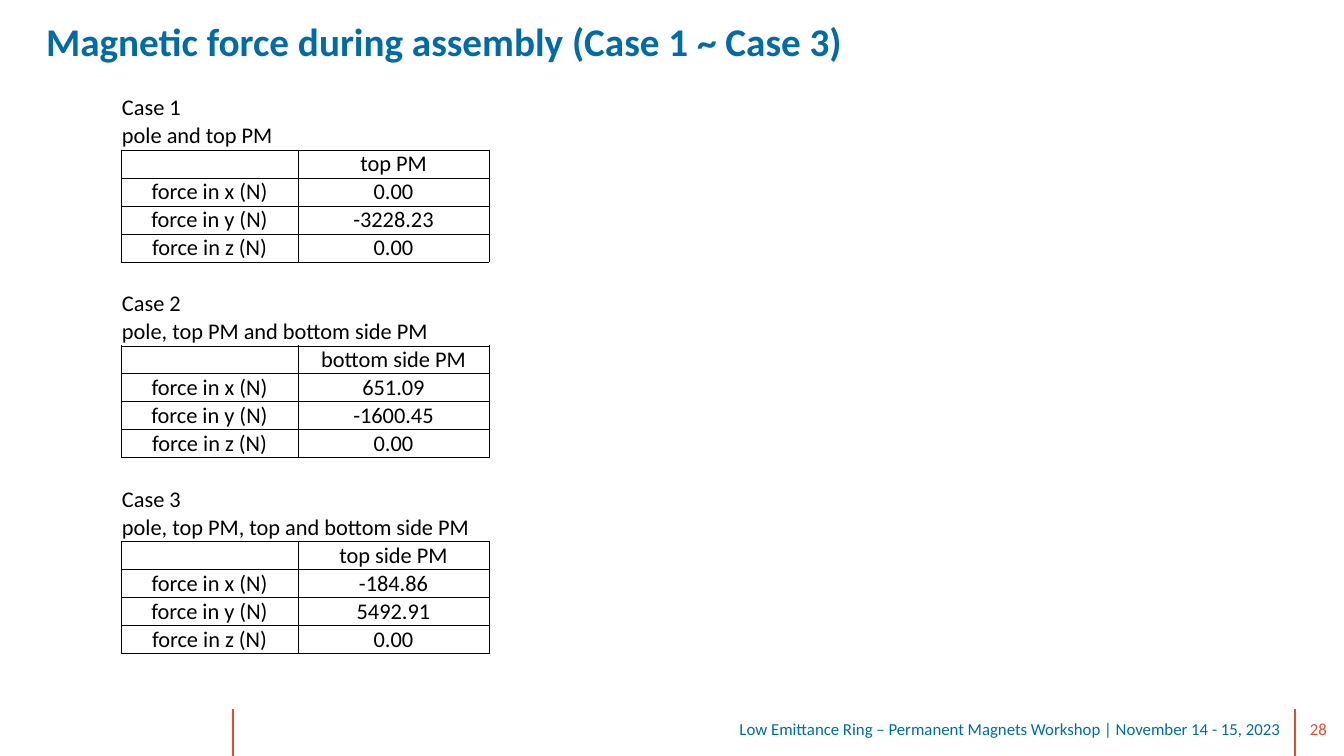
from lxml import etree
from pptx import Presentation
from pptx import util as u
from pptx.dml.color import RGBColor
from pptx.enum import shapes, text
from pptx.oxml.ns import qn

PX = 914400 / 100.8
COLORS = {"blue": "006BA6", "red": "E04E38", "black": "000000"}
FONT = "Calibri"
ROW_HEIGHT = 28
COLUMN_WIDTHS = (177, 191)
AXES = "xyz"
CASES = [
    ("Case 1", "pole and top PM", "top PM", ("0.00", "-3228.23", "0.00")),
    ("Case 2", "pole, top PM and bottom side PM", "bottom side PM",
     ("651.09", "-1600.45", "0.00")),
    ("Case 3", "pole, top PM, top and bottom side PM", "top side PM",
     ("-184.86", "5492.91", "0.00")),
]


def px(length):
    return u.Emu(round(length * PX))


def color(name):
    return RGBColor.from_string(COLORS[name])


def write(frame, words, size, ink="black", bold=False, align=text.PP_ALIGN.LEFT):
    paragraph = frame.paragraphs[0]
    paragraph.alignment = align
    if not words:  # keeps an empty line as low as a filled one
        etree.SubElement(paragraph._p, qn("a:endParaRPr"), sz=str(size * 100))
        return
    run = paragraph.add_run()
    run.text = words
    run.font.name = FONT
    run.font.size = u.Pt(size)
    run.font.bold = bold
    run.font.color.rgb = color(ink)


def set_borders(cell, sides):
    """Draw the named sides (of L, R, T, B) and hide the others."""
    properties = cell._tc.get_or_add_tcPr()
    for side in "LRTB":
        line = etree.SubElement(properties, qn("a:ln" + side), w=str(u.Pt(0.5)))
        if side in sides:
            fill = etree.SubElement(line, qn("a:solidFill"))
            etree.SubElement(fill, qn("a:srgbClr"), val=COLORS["black"])
        else:
            etree.SubElement(line, qn("a:noFill"))


def fill_cell(cell, words, sides, align):
    cell.margin_left = cell.margin_right = px(1)
    cell.margin_top = cell.margin_bottom = 0
    cell.vertical_anchor = text.MSO_ANCHOR.BOTTOM
    write(cell.text_frame, words, 16, align=align)
    set_borders(cell, sides)
    cell.fill.background()


def case_rows():
    """List each table row as its two texts, its borders and its alignment."""
    left, center = text.PP_ALIGN.LEFT, text.PP_ALIGN.CENTER
    rows = []
    for name, parts, magnet, forces in CASES:
        if rows:
            rows.append(("", "", "T", left))
        rows.append((name, "", "", left))
        rows.append((parts, "", "B", left))
        rows.append(("", magnet, "LRTB", center))
        rows += [(f"force in {axis} (N)", force, "LRTB", center)
                 for axis, force in zip(AXES, forces)]
    return rows


def add_force_table(slide, left, top):
    rows = case_rows()
    table = slide.shapes.add_table(
        len(rows), len(COLUMN_WIDTHS), px(left), px(top),
        px(sum(COLUMN_WIDTHS)), px(ROW_HEIGHT * len(rows))).table
    table.first_row = table.horz_banding = False
    for column, width in zip(table.columns, COLUMN_WIDTHS):
        column.width = px(width)
    for index, (label, value, sides, align) in enumerate(rows):
        table.rows[index].height = px(ROW_HEIGHT)
        fill_cell(table.cell(index, 0), label, sides, align)
        fill_cell(table.cell(index, 1), value, sides, align)
        if len(label) > 20:
            table.cell(index, 0).merge(table.cell(index, 1))


def add_title(slide, left, top, width, height):
    title = slide.shapes.title
    title.left, title.top = px(left), px(top)
    title.width, title.height = px(width), px(height)
    title.text_frame.vertical_anchor = text.MSO_ANCHOR.TOP
    title.text_frame.auto_size = text.MSO_AUTO_SIZE.NONE
    write(title.text_frame, "Magnetic force during assembly (Case 1 ~ Case 3)",
          28, "blue", bold=True)


def add_rule(slide, x, top, height):
    rule = slide.shapes.add_connector(
        shapes.MSO_CONNECTOR.STRAIGHT, px(x), px(top), px(x), px(top + height))
    rule.line.color.rgb = color("red")
    rule.line.width = u.Pt(1.5)
    etree.SubElement(rule._element.spPr, qn("a:effectLst"))


def add_label(slide, words, left, top, width, height, ink, align, wrap=True,
              margin_top=10):
    label = slide.shapes.add_textbox(px(left), px(top), px(width), px(height))
    frame = label.text_frame
    frame.word_wrap = wrap
    frame.vertical_anchor = text.MSO_ANCHOR.MIDDLE
    frame.margin_left = frame.margin_right = frame.margin_bottom = px(10)
    frame.margin_top = px(margin_top)
    write(frame, words, 12, ink, align=align)


def add_footer(slide, top, height):
    for x in (1295, 233):
        add_rule(slide, x, top, height)
    add_label(slide, "28", 1289, top + 2, 59, 40, "red",
              text.PP_ALIGN.CENTER, margin_top=5)
    add_label(slide, "Low Emittance Ring – Permanent Magnets Workshop | "
              "November 14 - 15, 2023", 723, top, 568, 40, "blue",
              text.PP_ALIGN.RIGHT, wrap=False)


def main():
    deck = Presentation()
    deck.slide_width, deck.slide_height = px(1344), px(756)
    slide = deck.slides.add_slide(deck.slide_layouts[5])
    add_title(slide, 36, 12, 1123, 57)
    add_force_table(slide, 121, 94)
    add_footer(slide, 709, 47)
    deck.save("out.pptx")


if __name__ == "__main__":
    main()
